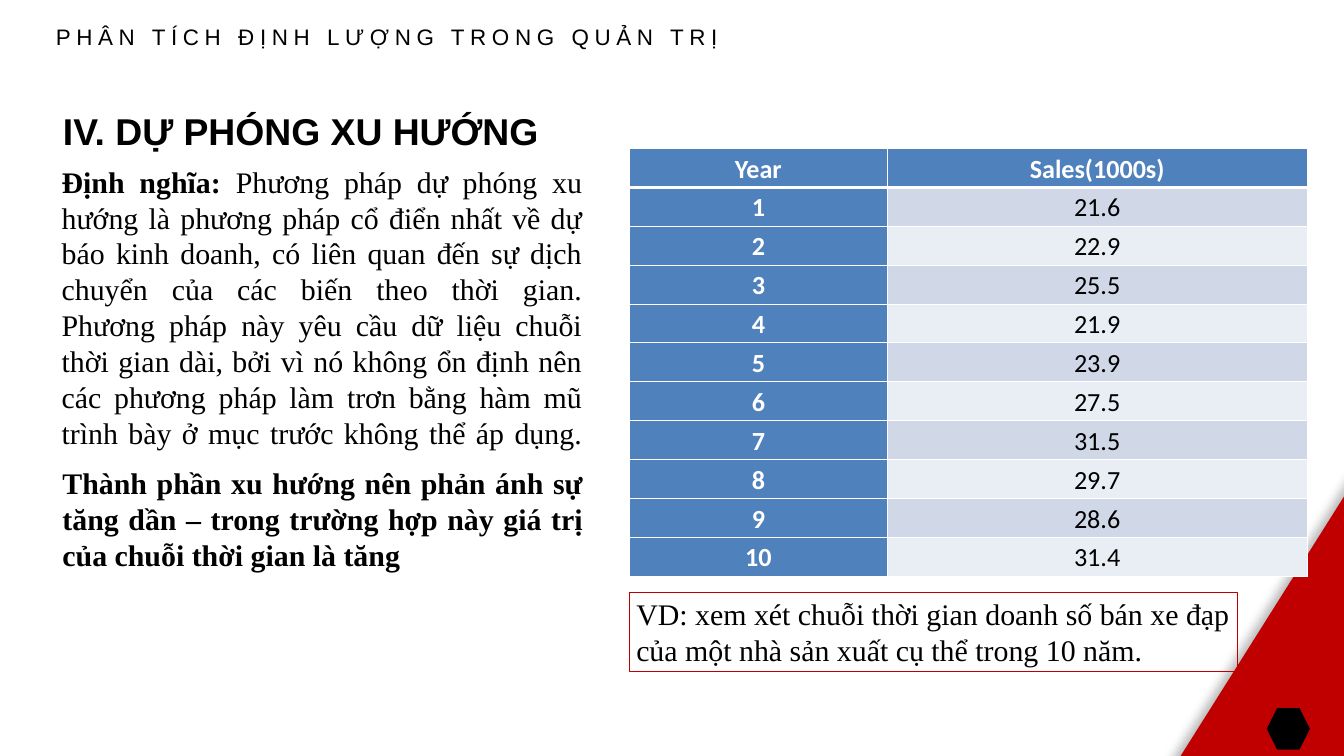
from lxml.etree import SubElement
from pptx import Presentation
from pptx.dml.color import RGBColor
from pptx.enum.shapes import MSO_SHAPE
from pptx.enum.text import MSO_ANCHOR, MSO_AUTO_SIZE, PP_ALIGN
from pptx.oxml.ns import qn
from pptx.util import Cm, Pt

BLACK = RGBColor(0x00, 0x00, 0x00)
WHITE = RGBColor(0xFF, 0xFF, 0xFF)
RED = RGBColor(0xC0, 0x00, 0x00)
BLUE = RGBColor(0x4F, 0x81, 0xBD)
BANDS = (RGBColor(0xD0, 0xD8, 0xE8), RGBColor(0xE9, 0xED, 0xF4))

SERIF = {"name": "Times New Roman", "size": Pt(32)}
SALES = (21.6, 22.9, 25.5, 21.9, 23.9, 27.5, 31.5, 29.7, 28.6, 31.4)
DEFINITION = (
    " Phương pháp dự phóng xu hướng là phương pháp cổ điển nhất về dự báo "
    "kinh doanh, có liên quan đến sự dịch chuyển của các biến theo thời gian. "
    "Phương pháp này yêu cầu dữ liệu chuỗi thời gian dài, bởi vì nó không ổn "
    "định nên các phương pháp làm trơn bằng hàm mũ trình bày ở mục trước "
    "không thể áp dụng."
)
CONCLUSION = (
    "Thành phần xu hướng nên phản ánh sự tăng dần – trong trường hợp này "
    "giá trị của chuỗi thời gian là tăng"
)
EXAMPLE = (
    "VD: xem xét chuỗi thời gian doanh số bán xe đạp của một nhà sản xuất "
    "cụ thể trong 10 năm."
)


def set_attributes(target, values):
    for name, value in values.items():
        setattr(target, name, value)


def add_run(paragraph, text, color=BLACK, **font_format):
    run = paragraph.add_run()
    run.text = text
    run.font.color.rgb = color
    set_attributes(run.font, font_format)
    return run


def add_text_box(slide, box, **frame_format):
    """Add a wrapping text box; return its first paragraph."""
    shape = slide.shapes.add_textbox(*map(Cm, box))
    set_attributes(shape.text_frame, {
        "word_wrap": True,
        "auto_size": MSO_AUTO_SIZE.SHAPE_TO_FIT_TEXT,
        **frame_format,
    })
    return shape.text_frame.paragraphs[0]


def add_filled_shape(slide, kind, box, color):
    shape = slide.shapes.add_shape(kind, *map(Cm, box))
    shape.shadow.inherit = False
    shape.fill.solid()
    shape.fill.fore_color.rgb = color
    shape.line.fill.background()
    return shape


def add_soft_shadow(shape):
    effects = shape.element.spPr.find(qn("a:effectLst"))
    shadow = SubElement(effects, qn("a:outerShdw"), blurRad=str(Pt(11.8)),
                        dist=str(Pt(19.7)), dir=str(141 * 60000),
                        algn="ctr", rotWithShape="0")
    color = SubElement(shadow, qn("a:srgbClr"), val=str(BLACK))
    SubElement(color, qn("a:alpha"), val="28000")


def set_cell_borders(cell, widths):
    properties = cell._tc.get_or_add_tcPr()
    for side, width in widths.items():
        line = SubElement(properties, qn(f"a:ln{side}"), w=str(Pt(width)))
        fill = SubElement(line, qn("a:solidFill"))
        SubElement(fill, qn("a:srgbClr"), val=str(WHITE))


def add_title(slide, text):
    title = slide.shapes.title
    set_attributes(title, {"left": Cm(1.27), "top": Cm(3.94),
                           "width": Cm(20.2), "height": Cm(2.03)})
    set_attributes(title.text_frame, {
        "margin_left": 0, "margin_right": 0, "margin_top": 0,
        "margin_bottom": 0, "vertical_anchor": MSO_ANCHOR.MIDDLE,
    })
    paragraph = title.text_frame.paragraphs[0]
    paragraph.alignment = PP_ALIGN.CENTER
    add_run(paragraph, text, name="Arial", size=Pt(40), bold=True)


def add_header(slide, text):
    paragraph = add_text_box(slide, (2.11, 0.89, 27.23, 1.02), margin_left=0,
                             margin_right=0, margin_top=0, margin_bottom=0)
    run = add_run(paragraph, text, name="Arial", size=Pt(24))
    run.font._element.set("spc", "600")


def add_sales_table(slide):
    rows = [("Year", "Sales(1000s)")]
    rows += [(str(year), str(sales)) for year, sales in enumerate(SALES, 1)]
    row_height = Cm(1.47)
    table = slide.shapes.add_table(len(rows), 2, Cm(23.8), Cm(5.61),
                                   Cm(25.61), row_height * len(rows)).table
    set_attributes(table, {"first_row": False, "horz_banding": False})
    for column, width in zip(table.columns, (9.73, 15.88)):
        column.width = Cm(width)
    for row_index, values in enumerate(rows):
        table.rows[row_index].height = row_height
        for column_index, text in enumerate(values):
            heading = row_index == 0 or column_index == 0
            cell = table.cell(row_index, column_index)
            set_cell_borders(cell, {"L": 1, "R": 1,
                                    "T": 3 if row_index == 1 else 1,
                                    "B": 3 if row_index == 0 else 1})
            cell.fill.solid()
            cell.fill.fore_color.rgb = (
                BLUE if heading else BANDS[(row_index - 1) % 2])
            set_attributes(cell, {"margin_left": Cm(0.18),
                                  "margin_right": Cm(0.18),
                                  "margin_top": 0, "margin_bottom": 0})
            paragraph = cell.text_frame.paragraphs[0]
            set_attributes(paragraph, {"alignment": PP_ALIGN.CENTER,
                                       "line_spacing": 1.15})
            add_run(paragraph, text, WHITE if heading else BLACK,
                    name="Calibri", size=Pt(28), bold=heading)


def add_definition(slide):
    paragraph = add_text_box(slide, (2.08, 6.05, 20.19, 12.57))
    paragraph.alignment = PP_ALIGN.JUSTIFY
    add_run(paragraph, "Định nghĩa:", bold=True, **SERIF)
    add_run(paragraph, DEFINITION, **SERIF)
    paragraph.add_line_break()  # justifies the last line too


def add_conclusion(slide):
    paragraph = add_text_box(slide, (2.11, 17.42, 20.19, 4.37),
                             vertical_anchor=MSO_ANCHOR.MIDDLE)
    paragraph.alignment = PP_ALIGN.JUSTIFY
    add_run(paragraph, CONCLUSION, bold=True, **SERIF)


def add_example(slide):
    box = (23.8, 22.4, 22.96, 3)
    shape = slide.shapes.add_shape(MSO_SHAPE.RECTANGLE, *map(Cm, box))
    shape.shadow.inherit = False
    shape.fill.background()
    shape.line.color.rgb = RED
    shape.line.width = Pt(0.75)
    set_attributes(shape.text_frame, {
        "word_wrap": True,
        "auto_size": MSO_AUTO_SIZE.SHAPE_TO_FIT_TEXT,
        "vertical_anchor": MSO_ANCHOR.TOP,
    })
    paragraph = shape.text_frame.paragraphs[0]
    paragraph.alignment = PP_ALIGN.LEFT
    add_run(paragraph, EXAMPLE, **SERIF)


def main():
    presentation = Presentation()
    presentation.slide_width = Cm(50.8)
    presentation.slide_height = Cm(28.58)
    slide = presentation.slides.add_slide(presentation.slide_layouts[5])

    corner = add_filled_shape(slide, MSO_SHAPE.RECTANGLE,
                              (45.8, 13.44, 12.93, 30.28), RED)
    corner.rotation = 32.2
    add_soft_shadow(corner)
    add_filled_shape(slide, MSO_SHAPE.HEXAGON,
                     (47.88, 26.77, 1.63, 1.57), BLACK)
    add_header(slide, "PHÂN TÍCH ĐỊNH LƯỢNG TRONG QUẢN TRỊ")
    add_sales_table(slide)
    add_definition(slide)
    add_title(slide, "IV. DỰ PHÓNG XU HƯỚNG")
    add_example(slide)
    add_conclusion(slide)
    presentation.save("out.pptx")


if __name__ == "__main__":
    main()
